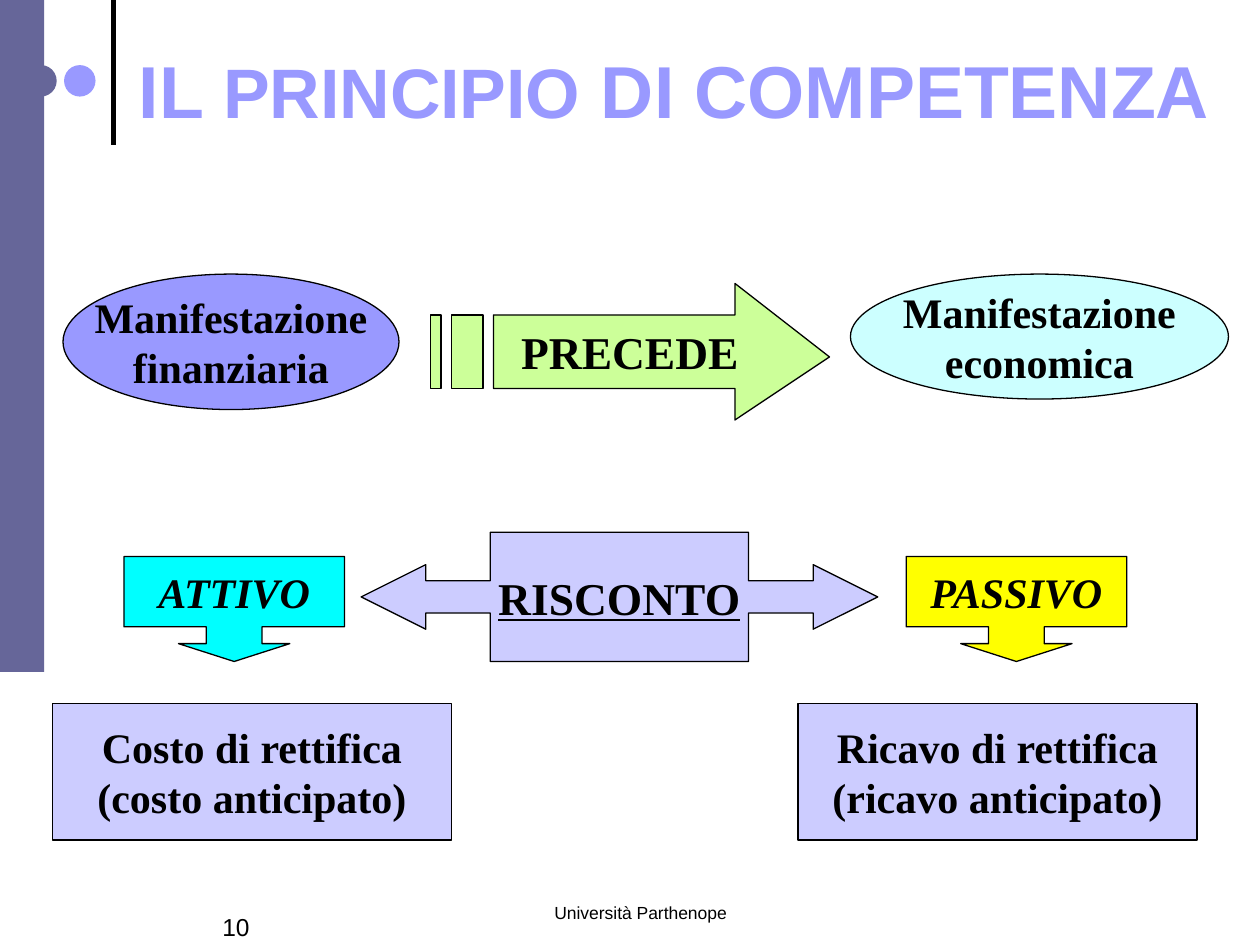
import pptx
import pptx.dml.color
import pptx.enum.shapes
import pptx.enum.text
import pptx.oxml.ns
import pptx.util
from lxml import etree

# Grid of 120 columns by 90 rows, twelve to the inch
COLUMNS, ROWS = 120, 90
CELL = pptx.util.Inches(10) // COLUMNS

COLORS = {
    "ink": "000000", "slate": "666699", "violet": "9999FF", "lilac": "CCCCFF",
    "yellow": "FFFF00", "cyan": "00FFFF", "green": "CCFF99", "ice": "CCFFFF",
}
SHAPES = pptx.enum.shapes.MSO_SHAPE
ALIGN = pptx.enum.text.PP_ALIGN
ANCHOR = pptx.enum.text.MSO_ANCHOR


def grid(*cells):
    return [round(cell * CELL) for cell in cells]


def color(name):
    return pptx.dml.color.RGBColor.from_string(COLORS[name])


def write(frame, lines, size=24, font="Times New Roman", ink="ink", bold=True,
          italic=False, underline=False, align=ALIGN.CENTER,
          anchor=ANCHOR.MIDDLE, wrap=False):
    """Each line is a string, or a list of (text, size) runs."""
    frame.word_wrap = wrap
    frame.vertical_anchor = anchor
    for index, line in enumerate(lines):
        paragraph = frame.add_paragraph() if index else frame.paragraphs[0]
        paragraph.alignment = align
        runs = [(line, size)] if isinstance(line, str) else line
        for text, points in runs:
            run = paragraph.add_run()
            run.text = text
            run.font.name = font
            run.font.size = pptx.util.Pt(points)
            run.font.bold = bold
            run.font.italic = italic
            run.font.underline = underline
            run.font.color.rgb = color(ink)


def paint(shape, fill, outlined=True):
    shape.shadow.inherit = False
    shape.fill.solid()
    shape.fill.fore_color.rgb = color(fill)
    if outlined:
        shape.line.color.rgb = color("ink")
        shape.line.width = pptx.util.Pt(0.75)
    else:
        shape.line.fill.background()


def add_block(slide, kind, cells, fill, lines=(), adjustments=(),
              outlined=True, **text_format):
    block = slide.shapes.add_shape(kind, *grid(*cells))
    for index, value in enumerate(adjustments):
        block.adjustments[index] = value
    paint(block, fill, outlined)
    write(block.text_frame, lines, **text_format)


def add_label(slide, cells, lines, **text_format):
    label = slide.shapes.add_textbox(*grid(*cells))
    write(label.text_frame, lines, wrap=True, **text_format)
    return label


def add_striped_arrow(slide, lines, **text_format):
    top, upper, lower, bottom = 27, 30.25, 36.75, 40
    tail, neck, tip = 46.9, 69.5, 79
    head = [(neck, top), (neck, upper), (tail, upper), (tail, lower),
            (neck, lower), (neck, bottom), (tip, (top + bottom) / 2)]
    stripes = [[(left, upper), (left, lower), (right, lower), (right, upper)]
               for left, right in ((43.3, 45.7), (41, 42.2))]
    builder = slide.shapes.build_freeform(*head[0], scale=CELL)
    builder.add_line_segments(head[1:])
    for stripe in stripes:
        builder.move_to(*stripe[0])
        builder.add_line_segments(stripe[1:])
    arrow = builder.convert_to_shape()
    paint(arrow, "green")
    write(arrow.text_frame, lines, **text_format)


def add_rule(slide, column, bottom):
    rule = slide.shapes.add_connector(
        pptx.enum.shapes.MSO_CONNECTOR.STRAIGHT, *grid(column, bottom, column, 0))
    rule.line.color.rgb = color("ink")
    rule.line.width = pptx.util.Pt(3)
    properties = rule._element.spPr
    etree.SubElement(properties, pptx.oxml.ns.qn("a:effectLst"))


def main():
    deck = pptx.Presentation()
    deck.slide_width, deck.slide_height = grid(COLUMNS, ROWS)
    slide = deck.slides.add_slide(deck.slide_layouts[6])

    # Side decoration
    add_rule(slide, 10.8, 13.8)
    for left, fill in ((2.4, "slate"), (6.1, "violet")):
        add_block(slide, SHAPES.OVAL, (left, 6.2, 3, 3), fill, outlined=False)
    add_block(slide, SHAPES.RECTANGLE, (0, 0, 4.2, 64), "slate", outlined=False)

    # Title, raised by one line of space below it
    title = add_label(slide, (10.8, 2.5, 106.8, 20),
                      [[("IL ", 42), ("PRINCIPIO", 40), (" DI COMPETENZA", 42)]],
                      font="Arial", ink="violet")
    title.text_frame.margin_bottom = grid(8.6)[0]

    # Which event comes first
    add_block(slide, SHAPES.OVAL, (6, 26.1, 32, 12.9), "violet",
              ["Manifestazione", "finanziaria"])
    add_striped_arrow(slide, ["PRECEDE"], size=26)
    add_block(slide, SHAPES.OVAL, (81, 26.1, 36, 11.9), "ice",
              ["Manifestazione", "economica"])

    # Deferral and its two kinds
    add_block(slide, SHAPES.LEFT_RIGHT_ARROW_CALLOUT, (34.4, 50.7, 49.2, 12.3),
              "lilac", ["RISCONTO"], (0.25, 0.25, 0.5, 0.5),
              size=26, underline=True)
    for left, fill, kind in ((11.8, "cyan", "ATTIVO"), (86.3, "yellow", "PASSIVO")):
        add_block(slide, SHAPES.DOWN_ARROW_CALLOUT, (left, 53, 21, 10), fill,
                  [kind], (0.53, 0.53, 0.17, 0.67), italic=True)

    # Resulting adjustments
    for left, effect in ((5, ["Costo di rettifica", "(costo anticipato)"]),
                         (76, ["Ricavo di rettifica", "(ricavo anticipato)"])):
        add_block(slide, SHAPES.RECTANGLE, (left, 67, 38, 13), "lilac", effect)

    # Footer
    add_label(slide, (42, 85.3, 38, 6), ["Università Parthenope"], size=10,
              font="Arial", bold=False, anchor=ANCHOR.TOP)
    add_label(slide, (20, 86.3, 17, 6), ["10"], size=14, font="Arial",
              bold=False, align=ALIGN.LEFT, anchor=ANCHOR.TOP)

    deck.save("out.pptx")


if __name__ == "__main__":
    main()
